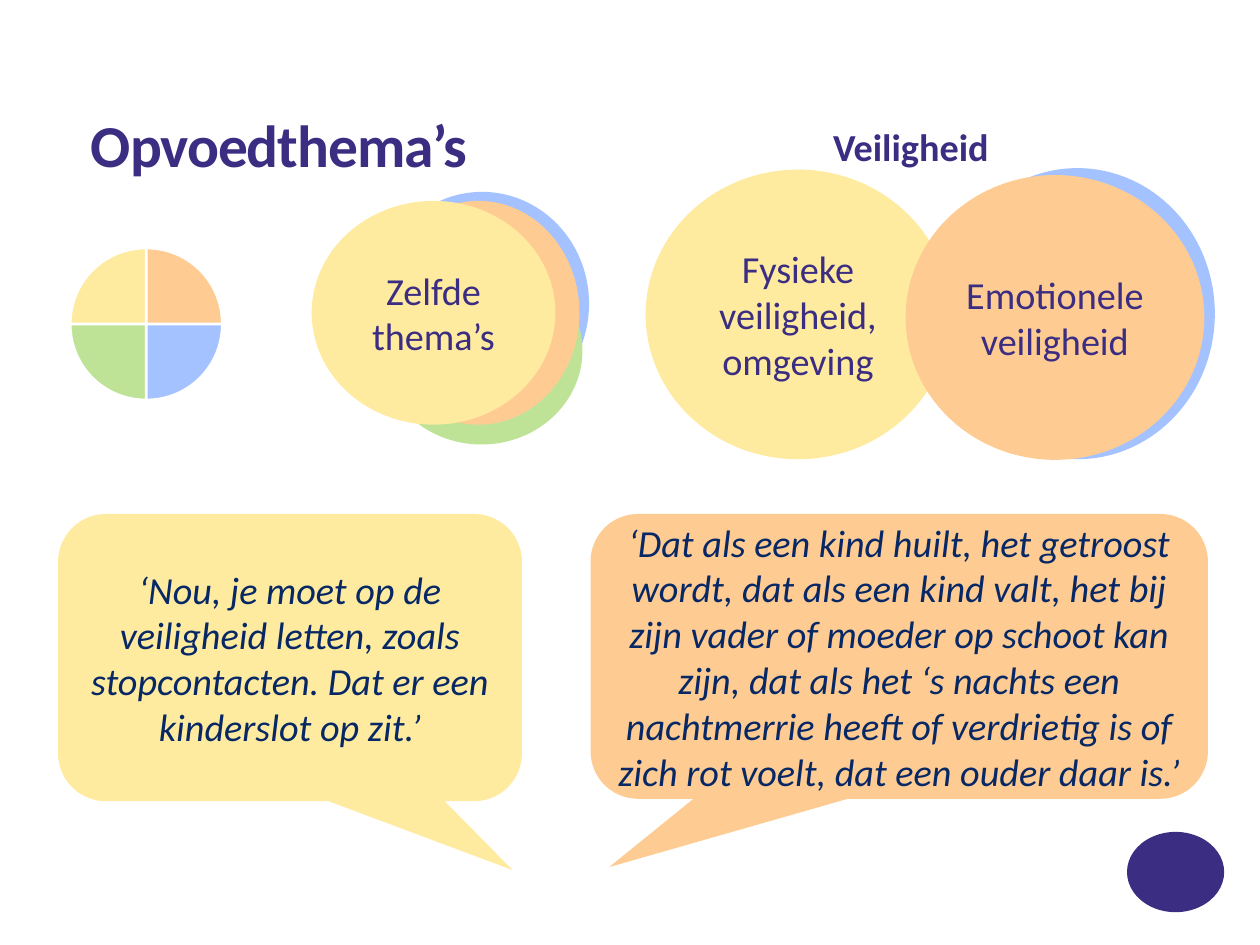
from dataclasses import dataclass

from lxml.etree import SubElement
from pptx import Presentation
from pptx.chart.data import CategoryChartData
from pptx.dml.color import RGBColor
from pptx.enum.chart import XL_CHART_TYPE as ChartType
from pptx.enum.shapes import MSO_AUTO_SHAPE_TYPE as ShapeType
from pptx.enum.text import MSO_ANCHOR as Anchor, PP_ALIGN as Align
from pptx.oxml import parse_xml
from pptx.oxml.ns import nsdecls, qn
from pptx.util import Cm, Pt


@dataclass(frozen=True)
class Theme:
    """Colours, font and type sizes of the slide."""

    yellow: RGBColor = RGBColor(0xFF, 0xEB, 0xA0)
    orange: RGBColor = RGBColor(0xFE, 0xCC, 0x92)
    blue: RGBColor = RGBColor(0xA3, 0xC2, 0xFF)
    green: RGBColor = RGBColor(0xBE, 0xE3, 0x96)
    purple: RGBColor = RGBColor(0x3B, 0x2D, 0x82)
    navy: RGBColor = RGBColor(0x07, 0x28, 0x65)
    white: RGBColor = RGBColor(0xFF, 0xFF, 0xFF)
    font: str = "Calibri"
    title: Pt = Pt(56)
    body: Pt = Pt(36)
    chart: Pt = Pt(10)


THEME = Theme()


def write(frame, lines, color, size=THEME.body, align=Align.CENTER, bold=False, italic=False):
    """Fill a text frame with one styled paragraph per line."""
    frame.word_wrap = True
    frame.text = "\n".join(lines)
    for paragraph in frame.paragraphs:
        paragraph.alignment = align
        font = paragraph.font
        font.name, font.size = THEME.font, size
        font.bold, font.italic = bold, italic
        font.color.rgb = color


def add_filled(slide, kind, box, fill):
    """Add a plain filled shape without outline or shadow."""
    shape = slide.shapes.add_shape(kind, *map(Cm, box))
    shape.shadow.inherit = False
    shape.fill.solid()
    shape.fill.fore_color.rgb = fill
    shape.line.fill.background()
    return shape


def add_circle(slide, box, fill, lines=()):
    """Add a theme circle with optional centred text."""
    circle = add_filled(slide, ShapeType.FLOWCHART_CONNECTOR, box, fill)
    if lines:
        circle.text_frame.vertical_anchor = Anchor.MIDDLE
        write(circle.text_frame, lines, THEME.purple)


def add_quote(slide, box, fill, tail, quote):
    """Add a speech balloon whose tail ends at the given relative point."""
    balloon = add_filled(slide, ShapeType.ROUNDED_RECTANGULAR_CALLOUT, box, fill)
    for index, value in enumerate((*tail, 0.167)):
        balloon.adjustments[index] = value
    balloon.text_frame.vertical_anchor = Anchor.MIDDLE
    write(balloon.text_frame, [quote], THEME.navy, italic=True)


def add_heading(slide, box, text, size):
    """Add a bold left-aligned heading and return its text frame."""
    frame = slide.shapes.add_textbox(*map(Cm, box)).text_frame
    write(frame, [text], THEME.purple, size, Align.LEFT, bold=True)
    return frame


def add_title(slide, box, text):
    """Add the tightly set slide title."""
    frame = add_heading(slide, box, text, THEME.title)
    frame.margin_left = frame.margin_right = frame.margin_top = frame.margin_bottom = 0
    title = frame.paragraphs[0]
    title.line_spacing = 0.8
    title.runs[0].font._element.set("spc", "-100")


def place_plot(chart, **layout):
    """Fix the inner plot area as fractions of the chart."""
    area = chart._chartSpace.xpath("c:chart/c:plotArea")[0]
    for old in area.findall(qn("c:layout")):
        area.remove(old)
    outer = parse_xml(f"<c:layout {nsdecls('c')}/>")
    manual = SubElement(outer, qn("c:manualLayout"))
    settings = {"layoutTarget": "inner", "xMode": "edge", "yMode": "edge", **layout}
    for tag, value in settings.items():
        SubElement(manual, qn(f"c:{tag}")).set("val", str(value))
    area.insert(0, outer)


def add_theme_pie(slide, box, colors):
    """Add a pie of equal, slightly separated slices."""
    data = CategoryChartData()
    data.categories = [str(number + 1) for number in range(len(colors))]
    data.add_series("Series 1", [100 / len(colors)] * len(colors))
    chart = slide.shapes.add_chart(ChartType.PIE, *map(Cm, box), data).chart
    chart.has_legend = chart.has_title = False
    chart.font.name, chart.font.size = THEME.font, THEME.chart
    chart.font.color.rgb = THEME.white
    chart.plots[0].vary_by_categories = True
    slices = chart.plots[0].series[0]
    slices.format.line.color.rgb = THEME.white
    explosion = parse_xml(f'<c:explosion {nsdecls("c")} val="1"/>')
    slices._element.find(qn("c:spPr")).addnext(explosion)
    for index, color in enumerate(colors):
        look = slices.points[index].format
        look.fill.solid()
        look.fill.fore_color.rgb = color
        look.line.color.rgb = THEME.white
        look.line.width = Pt(1.5)
    place_plot(chart, x=0.29, y=0.19, w=0.53, h=0.79)


def main():
    """Build the slide about parenting themes and save it."""
    deck = Presentation()
    deck.slide_width, deck.slide_height = Cm(41.88), Cm(31.42)
    slide = deck.slides.add_slide(deck.slide_layouts[6])

    add_filled(slide, ShapeType.OVAL, (37.46, 27.66, 3.23, 2.67), THEME.purple)
    add_title(slide, (3.02, 4.06, 35.84, 1.96), "Opvoedthema’s")

    add_circle(slide, (12.47, 6.38, 7.11, 7.44), THEME.blue)
    add_circle(slide, (12.65, 8.53, 6.71, 6.25), THEME.green)
    add_circle(slide, (12.55, 6.68, 6.71, 7.44), THEME.orange)
    add_circle(slide, (10.36, 6.68, 8.1, 7.44), THEME.yellow, ["Zelfde thema’s"])
    add_theme_pie(slide, (-0.41, 5.13, 9.5, 9.65),
                  (THEME.orange, THEME.blue, THEME.green, THEME.yellow))

    add_circle(slide, (31.24, 5.59, 9.14, 9.68), THEME.blue)
    add_circle(slide, (21.46, 5.64, 10.13, 9.63), THEME.yellow,
               ["Fysieke veiligheid, omgeving"])
    add_circle(slide, (30.1, 5.82, 9.93, 9.47), THEME.orange, ["Emotionele", "veiligheid"])
    add_heading(slide, (27.44, 3.96, 6.57, 1.8), "Veiligheid", THEME.body)

    add_quote(slide, (1.93, 17.09, 15.42, 9.55), THEME.yellow, (0.48, 0.74),
              "‘Nou, je moet op de veiligheid letten, zoals stopcontacten. "
              "Dat er een kinderslot op zit.’")
    add_quote(slide, (19.63, 17.09, 20.52, 9.47), THEME.orange, (-0.47, 0.74),
              "‘Dat als een kind huilt, het getroost wordt, dat als een kind valt, "
              "het bij zijn vader of moeder op schoot kan zijn, dat als het ‘s nachts "
              "een nachtmerrie heeft of verdrietig is of zich rot voelt, "
              "dat een ouder daar is.’")
    deck.save("out.pptx")


if __name__ == "__main__":
    main()
